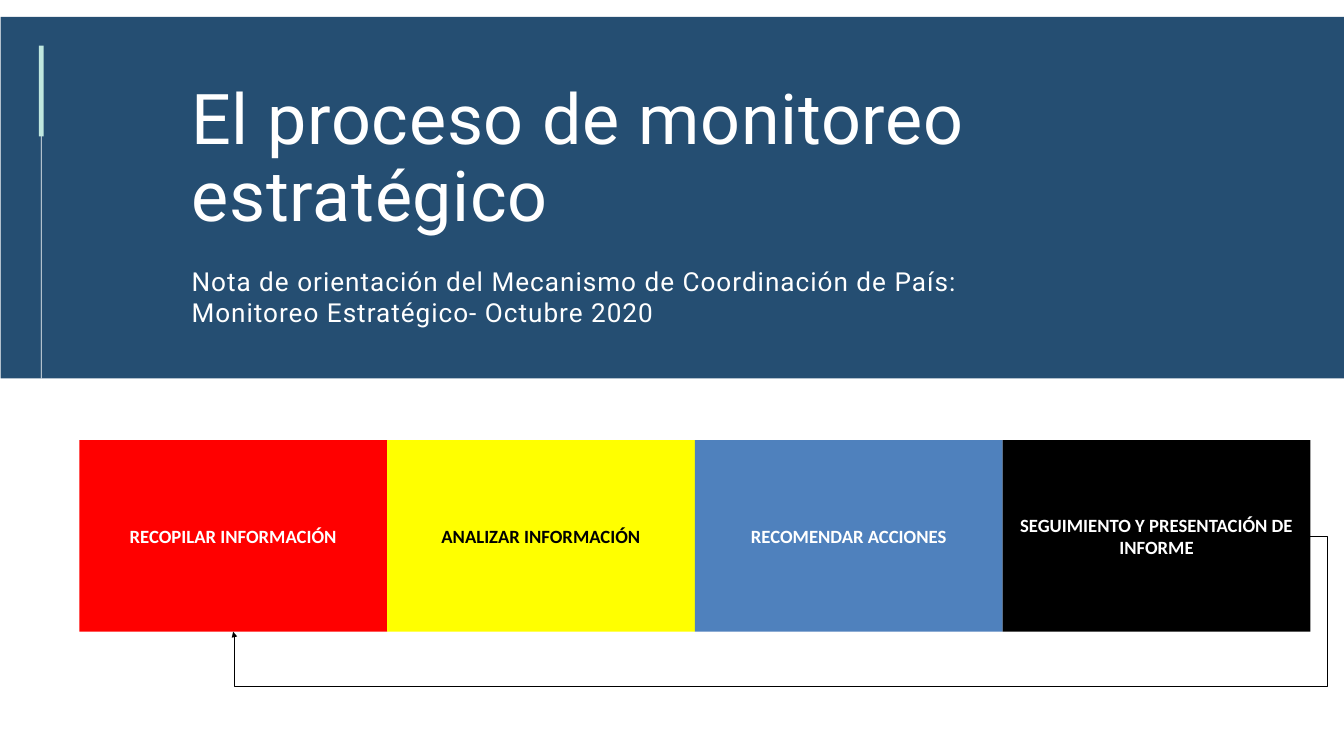
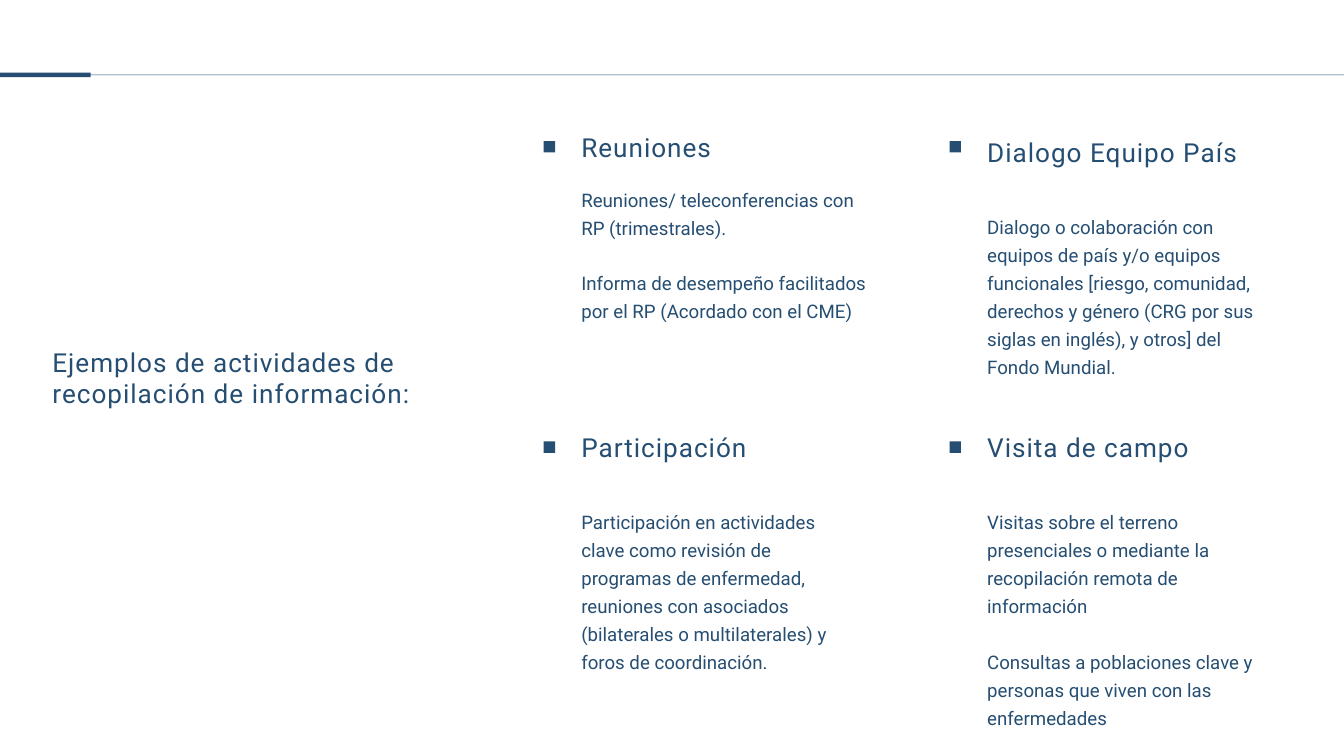
import pptx
import pptx.util
import pptx.dml.color
import pptx.enum.shapes
import pptx.enum.text
import pptx.oxml.ns
import lxml.etree

PX = 9144  # 100 px to the inch

NAVY = pptx.dml.color.RGBColor(0x25, 0x4E, 0x72)
WHITE = pptx.dml.color.RGBColor(0xFF, 0xFF, 0xFF)
BLACK = pptx.dml.color.RGBColor(0, 0, 0)
MINT = pptx.dml.color.RGBColor(0xC0, 0xE8, 0xDF)
RED = pptx.dml.color.RGBColor(0xFF, 0, 0)
YELLOW = pptx.dml.color.RGBColor(0xFF, 0xFF, 0)
BLUE = pptx.dml.color.RGBColor(0x4F, 0x81, 0xBD)


def add_rectangle(page, left, top, width, height, color):
    shape = page.shapes.add_shape(
        pptx.enum.shapes.MSO_SHAPE.RECTANGLE,
        left * PX, top * PX, width * PX, height * PX)
    shape.shadow.inherit = False
    shape.fill.solid()
    shape.fill.fore_color.rgb = color
    shape.line.fill.background()
    return shape


def add_text(page, paragraphs, left, top, width, height, size=20, color=NAVY,
             line=None, tracking=0, gap=0):
    box = page.shapes.add_textbox(left * PX, top * PX, width * PX, height * PX)
    frame = box.text_frame
    frame.word_wrap = True
    frame.margin_left = frame.margin_right = 0
    frame.margin_top = frame.margin_bottom = 0
    for index, text in enumerate(paragraphs):
        para = frame.add_paragraph() if index else frame.paragraphs[0]
        if line:
            para.line_spacing = pptx.util.Pt(line)
        if index:
            para.space_before = pptx.util.Pt(gap)
        span = para.add_run()
        span.text = text
        span.font.name = "Roboto"
        span.font.size = pptx.util.Pt(size)
        span.font.color.rgb = color
        if tracking:
            span.font._element.set("spc", str(tracking))


deck = pptx.Presentation()
deck.slide_width = 2000 * PX
deck.slide_height = 1125 * PX
blank = deck.slide_layouts[6]
HEADING = {"size": 28, "tracking": 110}

# Slide 1: title band
page = deck.slides.add_slide(blank)
add_rectangle(page, 1, 25, 1999, 538, NAVY)
add_text(page, ["El proceso de monitoreo estratégico"], 285, 122, 1168, 233,
         size=75, color=WHITE, line=82.5, tracking=80)
add_text(page, ["Nota de orientación del Mecanismo de Coordinación de País: "
                "Monitoreo Estratégico- Octubre 2020"], 285, 395, 1168, 94,
         color=WHITE, line=33.6, **HEADING)

# Process steps, side by side
steps = [
    ("RECOPILAR INFORMACIÓN", RED, WHITE),
    ("ANALIZAR INFORMACIÓN", YELLOW, BLACK),
    ("RECOMENDAR ACCIONES", BLUE, WHITE),
    ("SEGUIMIENTO Y PRESENTACIÓN DE INFORME", BLACK, WHITE),
]
step_boxes = []
for index, (label, fill, ink) in enumerate(steps):
    box = add_rectangle(page, 118 + 458 * index, 655, 458, 285, fill)
    box.text_frame.word_wrap = True
    box.text_frame.vertical_anchor = pptx.enum.text.MSO_ANCHOR.MIDDLE
    para = box.text_frame.paragraphs[0]
    para.alignment = pptx.enum.text.PP_ALIGN.CENTER
    span = para.add_run()
    span.text = label
    span.font.name = "Calibri"
    span.font.size = pptx.util.Pt(20)
    span.font.bold = True
    span.font.color.rgb = ink
    step_boxes.append(box)

# Feedback arrow from the last step to the first
feedback = page.shapes.add_connector(
    pptx.enum.shapes.MSO_CONNECTOR.ELBOW,
    1949 * PX, 797 * PX, 347 * PX, 940 * PX)
feedback.begin_connect(step_boxes[-1], 3)
feedback.end_connect(step_boxes[0], 2)
feedback.line.color.rgb = BLACK
feedback.line.width = pptx.util.Pt(0.75)
qn = pptx.oxml.ns.qn
lxml.etree.SubElement(feedback.line._get_or_add_ln(), qn("a:tailEnd"), type="triangle")
properties = feedback._element.spPr
lxml.etree.SubElement(properties, qn("a:effectLst"))
geometry = properties.find(qn("a:prstGeom"))
geometry.set("prst", "bentConnector5")
adjustments = geometry.find(qn("a:avLst"))
if adjustments is None:
    adjustments = lxml.etree.SubElement(geometry, qn("a:avLst"))
for number, value in enumerate((-1600, 157500, 99900), start=1):
    lxml.etree.SubElement(adjustments, qn("a:gd"),
                          name=f"adj{number}", fmla=f"val {value}")

# Vertical rule with its accent
add_rectangle(page, 61, 181, 1, 382, WHITE)
add_rectangle(page, 58, 68, 7, 135, MINT)

# Slide 2: horizontal rule with its accent, and title
page = deck.slides.add_slide(blank)
add_rectangle(page, 0, 111, 2000, 1, NAVY)
add_rectangle(page, 0, 108, 135, 7, NAVY)
add_text(page, ["Ejemplos de actividades de recopilación de información:"],
         78, 515, 547, 94, **HEADING)

# Activities: column, row, heading top, body top, body height, width, texts
activities = [
    (0, 0, 196, 272, 207, 435, "Reuniones",
     ["Reuniones/ teleconferencias con RP (trimestrales).",
      "Informa de desempeño facilitados por el RP (Acordado con el CME)"]),
    (0, 1, 642, 752, 249, 398, "Participación",
     ["Participación en actividades clave como revisión de programas de "
      "enfermedad, reuniones con asociados (bilaterales o multilaterales) y "
      "foros de coordinación."]),
    (1, 0, 203, 313, 249, 398, "Dialogo Equipo País",
     ["Dialogo o colaboración con equipos de país y/o equipos funcionales "
      "[riesgo, comunidad, derechos y género (CRG por sus siglas en inglés), "
      "y otros] del Fondo Mundial."]),
    (1, 1, 642, 752, 333, 398, "Visita de campo",
     ["Visitas sobre el terreno presenciales o mediante la recopilación "
      "remota de información",
      "Consultas a poblaciones clave y personas que viven con las "
      "enfermedades"]),
]
for column, row, heading_top, body_top, body_height, width, heading, body in activities:
    left = 809 + 604 * column
    add_rectangle(page, left, 210 + 447 * row, 17, 17, NAVY)
    add_text(page, [heading], left + 56, heading_top, width, 46, line=33.6, **HEADING)
    add_text(page, body, left + 56, body_top, width, body_height, line=30, gap=30)

deck.save("out.pptx")
